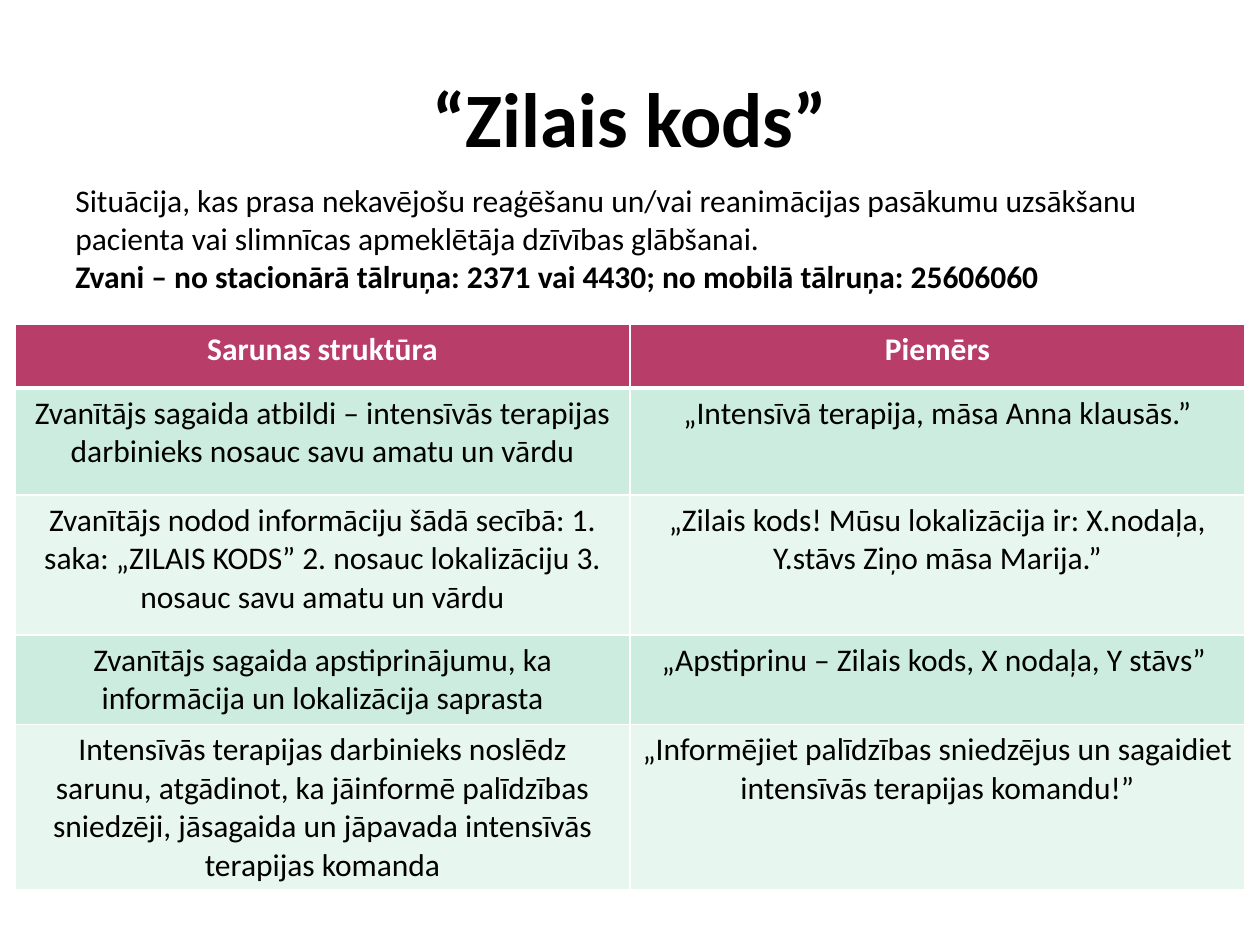
from lxml import etree
from pptx import Presentation
from pptx.dml.color import RGBColor
from pptx.enum.text import MSO_ANCHOR, PP_ALIGN
from pptx.oxml.ns import qn
from pptx.util import Inches, Pt

CENTER, LEFT = PP_ALIGN.CENTER, PP_ALIGN.LEFT
TOP, MIDDLE = MSO_ANCHOR.TOP, MSO_ANCHOR.MIDDLE
BLACK = RGBColor(0x00, 0x00, 0x00)
WHITE = RGBColor(0xFF, 0xFF, 0xFF)
HEADER = RGBColor(0xB8, 0x3D, 0x68)
BANDS = (RGBColor(0xCB, 0xEC, 0xDE), RGBColor(0xE7, 0xF6, 0xEF))
FONT = "Calibri"
WIDTH, HEIGHT = Inches(10), Inches(7.5)
MARGIN = Inches(0.12)
CONTENT_WIDTH = WIDTH - 2 * MARGIN
ROW_HEIGHTS = (0.51, 0.85, 1.11, 0.71, 1.31)

TITLE = "“Zilais kods”"
INTRODUCTION = (
    ("Situācija, kas prasa nekavējošu reaģēšanu un/vai reanimācijas pasākumu "
     "uzsākšanu pacienta vai slimnīcas apmeklētāja dzīvības glābšanai.", False),
    ("Zvani – no stacionārā tālruņa: 2371 vai 4430; "
     "no mobilā tālruņa: 25606060", True),
)
CALL_STEPS = (
    ("Sarunas struktūra", "Piemērs"),
    ("Zvanītājs sagaida atbildi – intensīvās terapijas darbinieks nosauc savu "
     "amatu un vārdu",
     "„Intensīvā terapija, māsa Anna klausās.”"),
    ("Zvanītājs nodod informāciju šādā secībā: 1. saka: „ZILAIS KODS” "
     "2. nosauc lokalizāciju 3. nosauc savu amatu un vārdu",
     "„Zilais kods! Mūsu lokalizācija ir: X.nodaļa, Y.stāvs Ziņo māsa Marija.”"),
    ("Zvanītājs sagaida apstiprinājumu, ka informācija un lokalizācija saprasta",
     "„Apstiprinu – Zilais kods, X nodaļa, Y stāvs” "),
    ("Intensīvās terapijas darbinieks noslēdz sarunu, atgādinot, ka jāinformē "
     "palīdzības sniedzēji, jāsagaida un jāpavada intensīvās terapijas komanda",
     "„Informējiet palīdzības sniedzējus un sagaidiet intensīvās terapijas "
     "komandu!”"),
)


def write(paragraph, text, size=18, color=BLACK, bold=False, alignment=CENTER):
    paragraph.alignment = alignment
    run = paragraph.add_run()
    run.text = text
    run.font.name = FONT
    run.font.size = Pt(size)
    run.font.bold = bold
    run.font.color.rgb = color


def add_title(slide, left, top, width, height):
    title = slide.shapes.title
    title.left, title.top, title.width, title.height = left, top, width, height
    title.text_frame.vertical_anchor = MIDDLE
    write(title.text_frame.paragraphs[0], TITLE, size=44, bold=True)


def add_introduction(slide, left, top, width, height):
    frame = slide.shapes.add_textbox(left, top, width, height).text_frame
    frame.word_wrap = True
    frame.vertical_anchor = TOP
    for index, (text, bold) in enumerate(INTRODUCTION):
        paragraph = frame.add_paragraph() if index else frame.paragraphs[0]
        properties = paragraph._p.get_or_add_pPr()
        properties.set("marL", str(Inches(0.38)))
        properties.set("indent", "0")
        write(paragraph, text, bold=bold, alignment=LEFT)


def set_borders(cell, top_width, bottom_width):
    properties = cell._tc.get_or_add_tcPr()
    widths = {"a:lnL": 1, "a:lnR": 1, "a:lnT": top_width, "a:lnB": bottom_width}
    for position, (tag, width) in enumerate(widths.items()):
        line = etree.Element(qn(tag), w=str(Pt(width)))
        fill = etree.SubElement(line, qn("a:solidFill"))
        etree.SubElement(fill, qn("a:srgbClr"), val=str(WHITE))
        properties.insert(position, line)


def add_call_table(slide, left, top, width, height):
    table = slide.shapes.add_table(
        len(CALL_STEPS), len(CALL_STEPS[0]), left, top, width, height).table
    for column in table.columns:
        column.width = width // len(table.columns)
    for row_index, texts in enumerate(CALL_STEPS):
        is_header = row_index == 0
        table.rows[row_index].height = int(
            height * ROW_HEIGHTS[row_index] / sum(ROW_HEIGHTS))
        for column_index, text in enumerate(texts):
            cell = table.cell(row_index, column_index)
            cell.fill.solid()
            cell.fill.fore_color.rgb = (
                HEADER if is_header else BANDS[(row_index - 1) % 2])
            set_borders(cell, 3 if row_index == 1 else 1, 3 if is_header else 1)
            write(cell.text_frame.paragraphs[0], text,
                  color=WHITE if is_header else BLACK, bold=is_header)


def main():
    presentation = Presentation()
    presentation.slide_width, presentation.slide_height = WIDTH, HEIGHT
    slide = presentation.slides.add_slide(presentation.slide_layouts[5])
    add_title(slide, int(WIDTH * 0.05), int(HEIGHT * 0.04),
              int(WIDTH * 0.9), Inches(1.25))
    add_introduction(slide, MARGIN, Inches(1.39), CONTENT_WIDTH, Inches(5.31))
    add_call_table(slide, MARGIN, Inches(2.57), CONTENT_WIDTH,
                   Inches(sum(ROW_HEIGHTS)))
    presentation.save("out.pptx")


if __name__ == "__main__":
    main()
